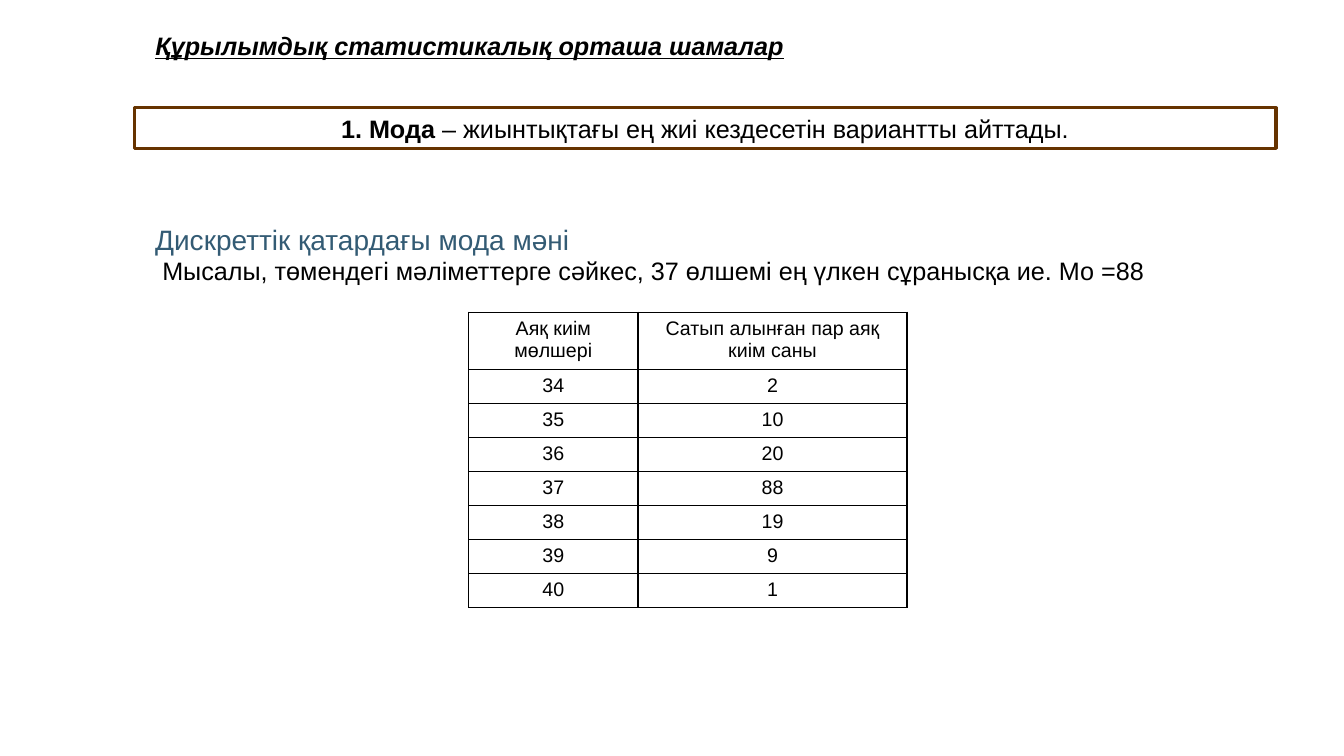
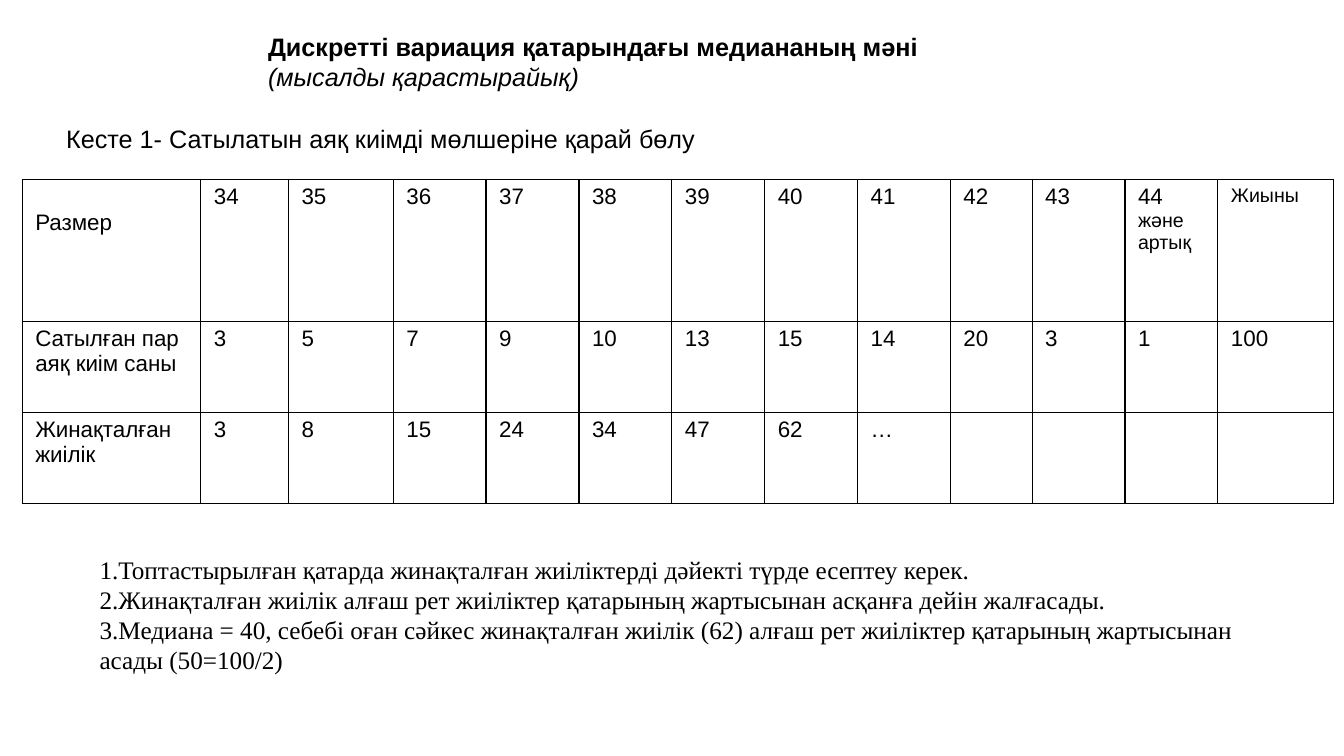
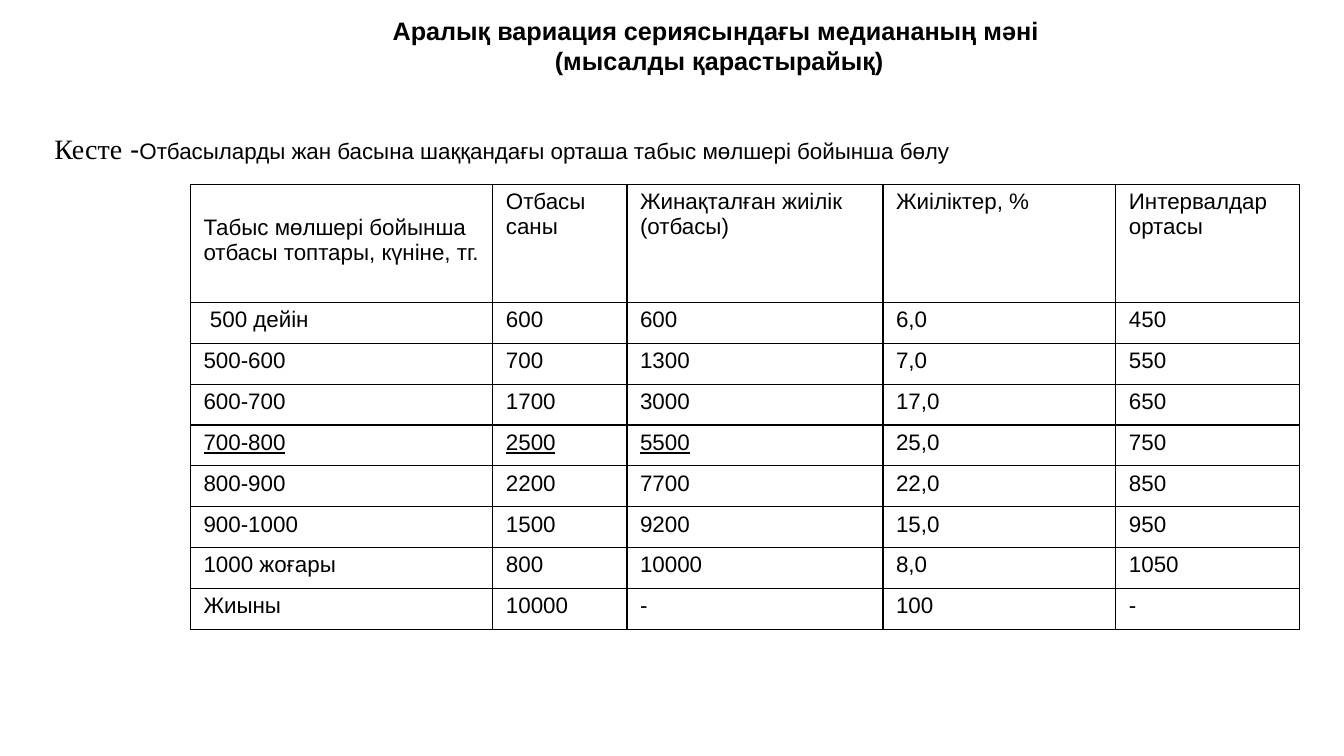
from pptx import Presentation
from pptx import util as u
from pptx.dml.color import RGBColor
from pptx.enum import shapes, text
from pptx.oxml import parse_xml
from pptx.oxml.ns import nsdecls

BLACK = RGBColor(0x00, 0x00, 0x00)
WHITE = RGBColor(0xFF, 0xFF, 0xFF)
BROWN = RGBColor(0x66, 0x33, 0x00)
BLUE = RGBColor(0x33, 0x5B, 0x74)
SANS, SERIF = "Arial", "Times New Roman"
LEFT, MID = text.PP_ALIGN.LEFT, text.PP_ALIGN.CENTER
UNDER = {"under": True}

MODE = {
    "title": ["Құрылымдық статистикалық орташа шамалар"],
    "rule": [[("1. Мода", {"bold": True}),
              (" – жиынтықтағы ең жиі кездесетін вариантты айттады.", {})]],
    "case": [[("Дискреттік қатардағы мода мәні", {"size": 20, "color": BLUE})],
             [("Мысалы, төмендегі мәліметтерге сәйкес, 37 өлшемі ең үлкен "
               "сұранысқа ие. Мо =88", {"indent": 0.18})]],
    "rows": [
        ["Аяқ киім мөлшері", "Сатып алынған пар аяқ киім саны"],
        ["34", "2"], ["35", "10"], ["36", "20"], ["37", "88"],
        ["38", "19"], ["39", "9"], ["40", "1"],
    ],
}

SIZES = {
    "title": ["Дискретті вариация қатарындағы медиананың мәні",
              [("(мысалды қарастырайық)", {"bold": False, "italic": True})]],
    "label": ["Кесте 1- Сатылатын аяқ киімді мөлшеріне қарай бөлу"],
    "rows": [
        ["Размер", "34", "35", "36", "37", "38", "39", "40", "41", "42", "43",
         [("44 ", {}), ("және артық", {"size": 14})],
         [("Жиыны", {"size": 14})]],
        ["Сатылған пар аяқ киім саны", "3", "5", "7", "9", "10", "13", "15",
         "14", "20", "3", "1", "100"],
        ["Жинақталған жиілік", "3", "8", "15", "24", "34", "47", "62", "…",
         "", "", "", ""],
    ],
    "notes": [
        "1.Топтастырылған қатарда жинақталған жиіліктерді дәйекті түрде "
        "есептеу керек.",
        "2.Жинақталған жиілік алғаш рет жиіліктер қатарының жартысынан "
        "асқанға дейін жалғасады.",
        "3.Медиана = 40, себебі оған сәйкес жинақталған жиілік (62) алғаш рет "
        "жиіліктер қатарының жартысынан асады (50=100/2)",
    ],
}

INCOME = {
    "title": ["Аралық вариация сериясындағы медиананың мәні ",
              "(мысалды қарастырайық)"],
    "label": [[("Кесте", {"size": 20, "font": SERIF}), (" -", {"size": 20}),
               ("Отбасыларды жан басына шаққандағы орташа табыс мөлшері "
                "бойынша бөлу", {})]],
    "rows": [
        ["Табыс мөлшері бойынша отбасы топтары, күніне, тг.", "Отбасы саны",
         "Жинақталған жиілік (отбасы)", "Жиіліктер, %", "Интервалдар ортасы"],
        [[("500 дейін", {"indent": 0.16})], "600", "600", "6,0", "450"],
        ["500-600", "700", "1300", "7,0", "550"],
        ["600-700", "1700", "3000", "17,0", "650"],
        [[("700-800", UNDER)], [("2500", UNDER)], [("5500", UNDER)],
         "25,0", "750"],
        ["800-900", "2200", "7700", "22,0", "850"],
        ["900-1000", "1500", "9200", "15,0", "950"],
        ["1000 жоғары", "800", "10000", "8,0", "1050"],
        ["Жиыны", "10000", "-", "100", "-"],
    ],
}


def write(frame, paras, align=LEFT, **base):
    frame.word_wrap = True
    for num, para in enumerate(paras):
        line = frame.add_paragraph() if num else frame.paragraphs[0]
        line.alignment = align
        for words, own in [(para, {})] if isinstance(para, str) else para:
            fmt = {**base, **own}
            if "indent" in fmt:
                line._p.get_or_add_pPr().set("marL", str(u.Cm(fmt["indent"])))
            run = line.add_run()
            run.text = words
            font = run.font
            font.name = fmt.get("font", SANS)
            font.size = u.Pt(fmt.get("size", 18))
            font.bold = fmt.get("bold", False)
            font.italic = fmt.get("italic", False)
            font.underline = fmt.get("under", False)
            font.color.rgb = fmt.get("color", BLACK)


def place(shape, box):
    shape.left, shape.top, shape.width, shape.height = map(u.Cm, box)


def start(deck, paras, box, **fmt):
    slide = deck.slides.add_slide(deck.slide_layouts[5])
    title = slide.shapes.title
    place(title, box)
    frame = title.text_frame
    frame.auto_size = text.MSO_AUTO_SIZE.NONE
    frame.vertical_anchor = text.MSO_ANCHOR.MIDDLE
    write(frame, paras, bold=True, **fmt)
    return slide


def block(slide, paras, box, **fmt):
    shape = slide.shapes.add_textbox(*map(u.Cm, box))
    shape.text_frame.vertical_anchor = text.MSO_ANCHOR.MIDDLE
    write(shape.text_frame, paras, **fmt)
    return shape


def frame_box(slide, paras, box):
    shape = slide.shapes.add_shape(shapes.MSO_SHAPE.RECTANGLE, *map(u.Cm, box))
    shape.shadow.inherit = False
    shape.fill.background()
    shape.line.color.rgb = BROWN
    shape.line.width = u.Pt(2.25)
    shape.text_frame.vertical_anchor = text.MSO_ANCHOR.MIDDLE
    write(shape.text_frame, paras, align=MID)


def edge(cell):
    props = cell._tc.get_or_add_tcPr()
    for side in "LRTB":
        props.append(parse_xml(
            f'<a:ln{side} {nsdecls("a")} w="{u.Pt(1)}"><a:solidFill>'
            f'<a:srgbClr val="{BLACK}"/></a:solidFill></a:ln{side}>'))
    cell.fill.background()


def grid(slide, rows, left, top, wide, high, drop=0.13, **fmt):
    table = slide.shapes.add_table(
        len(rows), len(wide),
        *map(u.Cm, (left, top, sum(wide), sum(high)))).table
    table.first_row = table.horz_banding = False
    for col, size in zip(table.columns, wide):
        col.width = u.Cm(size)
    for row, size, line in zip(table.rows, high, rows):
        row.height = u.Cm(size)
        for cell, para in zip(row.cells, line):
            cell.margin_left = cell.margin_right = u.Cm(0.33)
            cell.margin_top = cell.margin_bottom = u.Cm(0.13)
            edge(cell)
            if para:
                write(cell.text_frame, [para], **fmt)
    table.cell(0, 0).margin_top = u.Cm(drop)


def main():
    deck = Presentation()
    deck.slide_width, deck.slide_height = u.Cm(33.87), u.Cm(19.05)

    slide = start(deck, MODE["title"], (3.66, 0.64, 26.52, 1.02),
                  italic=True, under=True)
    frame_box(slide, MODE["rule"], (3.38, 2.72, 28.78, 1.02))
    case = block(slide, MODE["case"], (3.66, 5.46, 28.22, 1.88))
    case.fill.solid()
    case.fill.fore_color.rgb = WHITE
    grid(slide, MODE["rows"], 11.81, 7.87, [4.27, 6.78],
         [1.45] + [0.85] * 7, size=14, align=MID)

    slide = start(deck, SIZES["title"], (6.5, 0.64, 17.25, 1.8))
    block(slide, SIZES["label"], (1.42, 2.97, 16.51, 1.02))
    grid(slide, SIZES["rows"], 0.56, 4.52,
         [4.5, 2.21, 2.64] + [2.34] * 6 + [2.06, 2.34, 2.34, 2.92],
         [3.58, 2.29, 2.29], drop=0.77, size=16)
    block(slide, SIZES["notes"], (2.26, 13.82, 30.76, 3.33), font=SERIF)

    slide = start(deck, INCOME["title"], (2.39, 0.25, 31.47, 1.78), align=MID)
    block(slide, INCOME["label"], (1.12, 3.18, 32.16, 1.12), size=16)
    grid(slide, INCOME["rows"], 4.8, 4.65, [7.62, 3.38, 6.45, 5.87, 4.62],
         [2.97] + [1.03] * 8, drop=0.77, size=16)

    deck.save("out.pptx")


if __name__ == "__main__":
    main()
